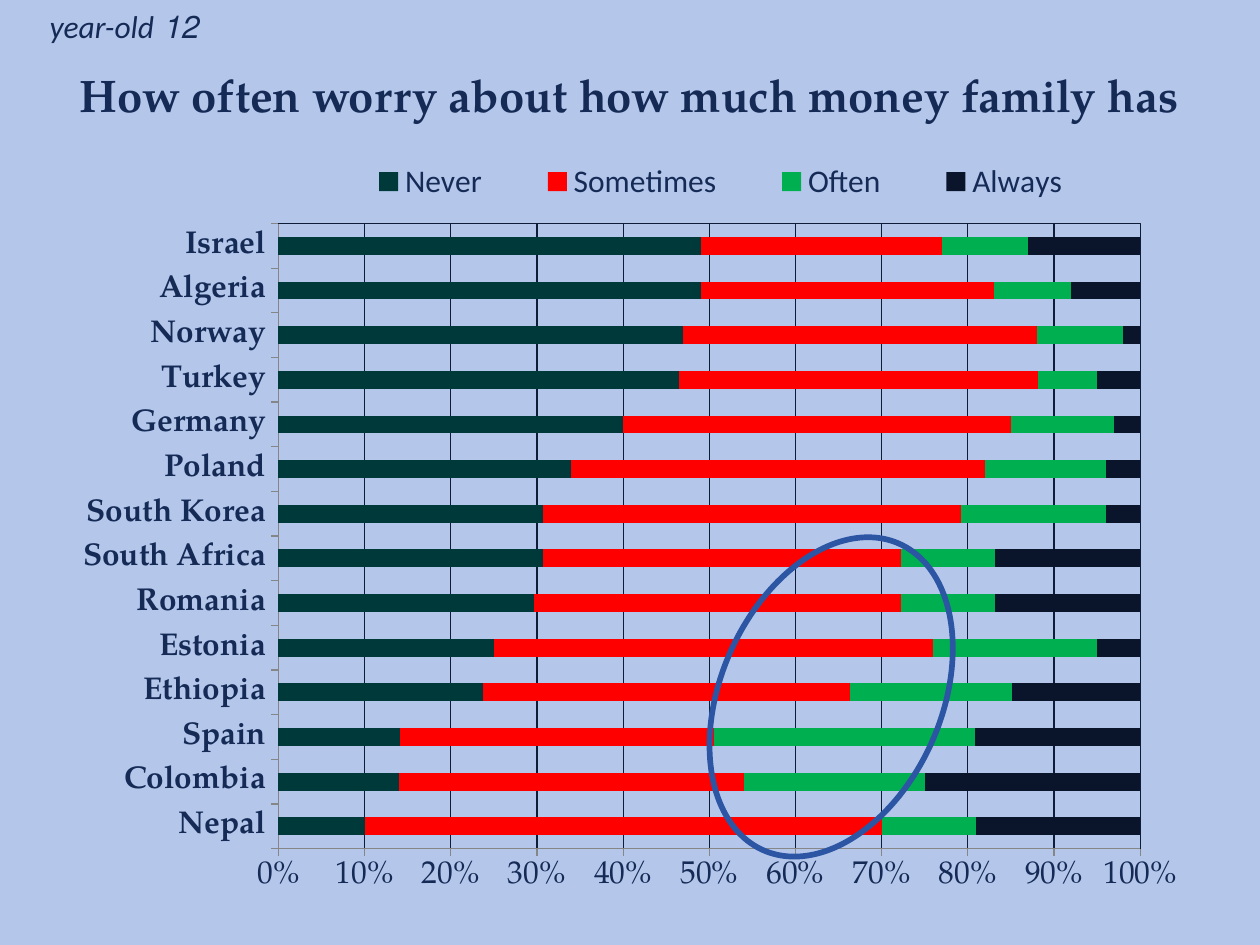
from lxml import etree
from pptx import Presentation
from pptx.chart.data import CategoryChartData
from pptx.dml.color import RGBColor
from pptx.enum import chart as ch, shapes, text
from pptx.oxml import parse_xml
from pptx.oxml.ns import nsdecls, qn
from pptx.util import Cm, Pt

# Content
TITLE = "How often worry about how much money family has"
AGE = "12 year-old"
NAMES = ["Never", "Sometimes", "Often", "Always"]
ROWS = [  # bottom to top, percent per answer
    ("Nepal", 10, 60, 11, 19),
    ("Colombia", 14, 40, 21, 25),
    ("Spain", 14, 36, 30, 19),
    ("Ethiopia", 24, 43, 19, 15),
    ("Estonia", 25, 51, 19, 5),
    ("Romania", 30, 43, 11, 17),
    ("South Africa", 31, 42, 11, 17),
    ("South Korea", 31, 49, 17, 4),
    ("Poland", 34, 48, 14, 4),
    ("Germany", 40, 45, 12, 3),
    ("Turkey", 47, 42, 7, 5),
    ("Norway", 47, 41, 10, 2),
    ("Algeria", 49, 34, 9, 8),
    ("Israel", 49, 28, 10, 13),
]

# Style
SKY = RGBColor(0xB4, 0xC7, 0xEB)
NAVY = RGBColor(0x15, 0x2B, 0x56)
DARK = RGBColor(0x0E, 0x1C, 0x38)
GREY = RGBColor(0x86, 0x86, 0x86)
BLUE = RGBColor(0x2C, 0x55, 0xA4)
FILLS = [RGBColor(0x00, 0x39, 0x39), RGBColor(0xFF, 0x00, 0x00),
         RGBColor(0x00, 0xB0, 0x50), RGBColor(0x0A, 0x15, 0x2B)]
SERIF, SANS = "TeX Gyre Pagella", "Calibri"


def style(font, name, size, bold=False, italic=False):
    font.name, font.size = name, Pt(size)
    font.bold, font.italic = bold, italic
    font.color.rgb = NAVY


def write(frame, words, *look):
    frame.word_wrap = True
    frame.vertical_anchor = text.MSO_ANCHOR.MIDDLE
    para = frame.paragraphs[0]
    para.alignment = text.PP_ALIGN.CENTER
    run = para.add_run()
    run.text = words
    style(run.font, *look)
    return para


def place(node, spot, x, y, w, h, inner=False):
    """Give a chart part a fixed place, in fractions of the chart."""
    for old in node.findall(qn("c:layout")):
        node.remove(old)
    lay = parse_xml(f'<c:layout {nsdecls("c")}><c:manualLayout/></c:layout>')
    pairs = [("layoutTarget", "inner")] if inner else []
    pairs += [("xMode", "edge"), ("yMode", "edge"),
              ("x", x), ("y", y), ("w", w), ("h", h)]
    for tag, val in pairs:
        etree.SubElement(lay[0], qn("c:" + tag)).set("val", str(val))
    node.insert(spot, lay)


def add_bars(slide):
    data = CategoryChartData(number_format="General")
    cats, *cols = zip(*ROWS)
    data.categories = cats
    for name, vals in zip(NAMES, cols):
        data.add_series(name, vals)
    chart = slide.shapes.add_chart(
        ch.XL_CHART_TYPE.BAR_STACKED_100, Cm(1.27), Cm(2.97),
        Cm(22.86), Cm(15.37), data).chart
    chart.has_title = False
    style(chart.font, SANS, 18)

    # Bars
    plot = chart.plots[0]
    plot.gap_width, plot.overlap = 150, 100
    plot.vary_by_categories = False
    for bar, fill in zip(plot.series, FILLS):
        bar.format.fill.solid()
        bar.format.fill.fore_color.rgb = fill

    # Axes
    for axis, bold in ((chart.category_axis, True), (chart.value_axis, False)):
        style(axis.tick_labels.font, SERIF, 18, bold)
        axis.major_tick_mark = ch.XL_TICK_MARK.OUTSIDE
        axis.minor_tick_mark = ch.XL_TICK_MARK.NONE
        axis.format.line.color.rgb = GREY
        axis.format.line.width = Pt(0.75)
    axis = chart.value_axis
    axis.minimum_scale, axis.maximum_scale, axis.major_unit = 0, 1, 0.1
    axis.tick_labels.number_format = "0%"
    axis.tick_labels.number_format_is_linked = False
    axis.has_major_gridlines = True
    axis.major_gridlines.format.line.color.rgb = DARK
    axis.major_gridlines.format.line.width = Pt(0.75)

    # Legend
    chart.has_legend = True
    legend = chart.legend
    legend.position = ch.XL_LEGEND_POSITION.TOP
    legend.include_in_layout = False
    style(legend.font, SANS, 18)
    place(legend._element, 1, 0.23, 0.01, 0.7, 0.07)

    # Plot area with a frame
    area = chart._chartSpace.chart.plotArea
    place(area, 0, 0.19, 0.1, 0.76, 0.82, inner=True)
    area.append(parse_xml(
        f'<c:spPr {nsdecls("c", "a")}><a:noFill/><a:ln w="9525"><a:solidFill>'
        f'<a:srgbClr val="{DARK}"/></a:solidFill></a:ln></c:spPr>'))


def main():
    deck = Presentation()
    deck.slide_width, deck.slide_height = Cm(25.4), Cm(19.05)
    slide = deck.slides.add_slide(deck.slide_layouts[5])
    slide.background.fill.solid()
    slide.background.fill.fore_color.rgb = SKY

    # Title
    head = slide.shapes.title
    head.left, head.top = Cm(1.27), Cm(0.33)
    head.width, head.height = Cm(22.86), Cm(3.15)
    write(head.text_frame, TITLE, SERIF, 26, True)

    # Age note, set right to left
    note = slide.shapes.add_textbox(Cm(0.08), Cm(-0.08), Cm(4.83), Cm(1.19))
    para = write(note.text_frame, AGE, SANS, 18, False, True)
    para._p.get_or_add_pPr().set("rtl", "1")

    add_bars(slide)

    # Ring around the lower group
    ring = slide.shapes.add_shape(shapes.MSO_SHAPE.OVAL, Cm(14.53), Cm(10.67),
                                  Cm(4.45), Cm(6.76))
    ring.rotation = 23.9
    ring.shadow.inherit = False
    ring.fill.background()
    ring.line.color.rgb = BLUE
    ring.line.width = Pt(3.25)

    deck.save("out.pptx")


if __name__ == "__main__":
    main()
